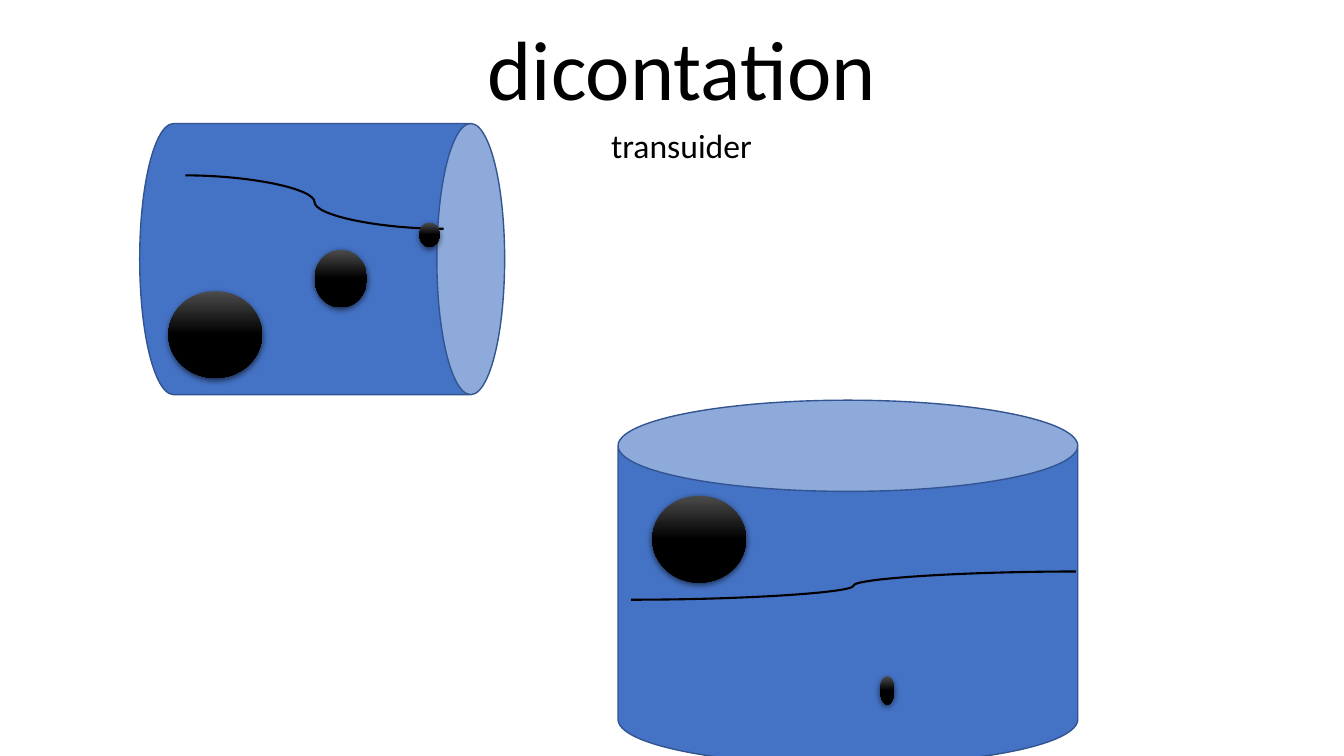
from lxml.etree import SubElement
from pptx import Presentation
from pptx.dml.color import RGBColor
from pptx.enum.shapes import MSO_CONNECTOR, MSO_SHAPE
from pptx.enum.text import MSO_ANCHOR, MSO_AUTO_SIZE, PP_ALIGN
from pptx.oxml.ns import qn
from pptx.util import Inches, Pt

COLORS = {"ink": "000000", "sheen": "4B4B4B", "can": "4472C4", "rim": "325491"}


def color(name):
    return RGBColor.from_string(COLORS[name])


def write(holder, text, box, size, anchor):
    """Place a placeholder in its box and set its formatted text."""
    holder.left, holder.top, holder.width, holder.height = map(Inches, box)
    frame = holder.text_frame
    frame.word_wrap = True
    frame.auto_size = MSO_AUTO_SIZE.NONE
    frame.vertical_anchor = anchor
    paragraph = frame.paragraphs[0]
    paragraph.text = text
    paragraph.alignment = PP_ALIGN.CENTER
    paragraph.line_spacing = 0.9
    paragraph.space_before = Pt(0)
    font = paragraph.runs[0].font
    font.name, font.size = "Calibri", Pt(size)
    font.color.rgb = color("ink")


def add_can(slide, box, rotation):
    can = slide.shapes.add_shape(MSO_SHAPE.CAN, *map(Inches, box))
    can.rotation = rotation
    can.shadow.inherit = False
    can.fill.solid()
    can.fill.fore_color.rgb = color("can")
    can.line.color.rgb = color("rim")
    can.line.width = Pt(1)


def add_curve(slide, start, end):
    curve = slide.shapes.add_connector(MSO_CONNECTOR.CURVE, *map(Inches, start + end))
    curve.line.color.rgb = color("ink")
    curve.line.width = Pt(1.5)
    SubElement(curve._element.spPr, qn("a:effectLst"))


def add_ball(slide, box):
    ball = slide.shapes.add_shape(MSO_SHAPE.OVAL, *map(Inches, box))
    ball.line.fill.background()
    # Sheen at the top, black from the middle down
    ball.fill.gradient()
    ball.fill.gradient_angle = 270
    for stop, position, name in zip(ball.fill.gradient_stops, (0, 0.5), ("sheen", "ink")):
        stop.position = position
        stop.color.rgb = color(name)
    # Soft shadow below
    ball.shadow.inherit = False
    effects = ball._element.spPr.find(qn("a:effectLst"))
    shadow = SubElement(effects, qn("a:outerShdw"), blurRad=str(Pt(4.5)),
                        dist=str(Pt(1.5)), dir="5400000", algn="ctr", rotWithShape="0")
    shade = SubElement(shadow, qn("a:srgbClr"), val=COLORS["ink"])
    SubElement(shade, qn("a:alpha"), val="63000")


def add_container(slide, box, rotation, curve, balls):
    """Draw a can with its curve and balls, all offset from the box corner."""
    left, top = box[:2]
    add_can(slide, box, rotation)
    start, end = [(left + x, top + y) for x, y in curve]
    add_curve(slide, start, end)
    for x, y, width, height in balls:
        add_ball(slide, (left + x, top + y, width, height))


def add_heading(slide, box):
    left, top, width, height = box
    title, subtitle = slide.placeholders
    write(title, "dicontation", (left + 0.74, top, 8.52, 1.23), 60, MSO_ANCHOR.BOTTOM)
    write(subtitle, "transuider", (left, top + 1.23, width, height - 1.23), 24,
          MSO_ANCHOR.TOP)


def main():
    deck = Presentation()
    deck.slide_width, deck.slide_height = Inches(13.33), Inches(7.5)
    slide = deck.slides.add_slide(deck.slide_layouts[0])
    add_heading(slide, (1.76, 0, 10, 3.04))
    # Can lying on its side
    add_container(slide, (1.85, 0.76, 2.69, 3.62), 90,
                  curve=[(-0.01, 0.98), (2.55, 1.51)],
                  balls=[(-0.18, 2.13, 0.93, 0.86), (1.27, 1.72, 0.52, 0.57),
                         (2.31, 1.45, 0.2, 0.24)])
    # Upright can
    add_container(slide, (6.13, 3.97, 4.56, 3.62), 0,
                  curve=[(0.13, 1.98), (4.54, 1.7)],
                  balls=[(0.34, 0.95, 0.93, 0.86), (2.6, 2.74, 0.14, 0.28)])
    deck.save("out.pptx")


if __name__ == "__main__":
    main()
